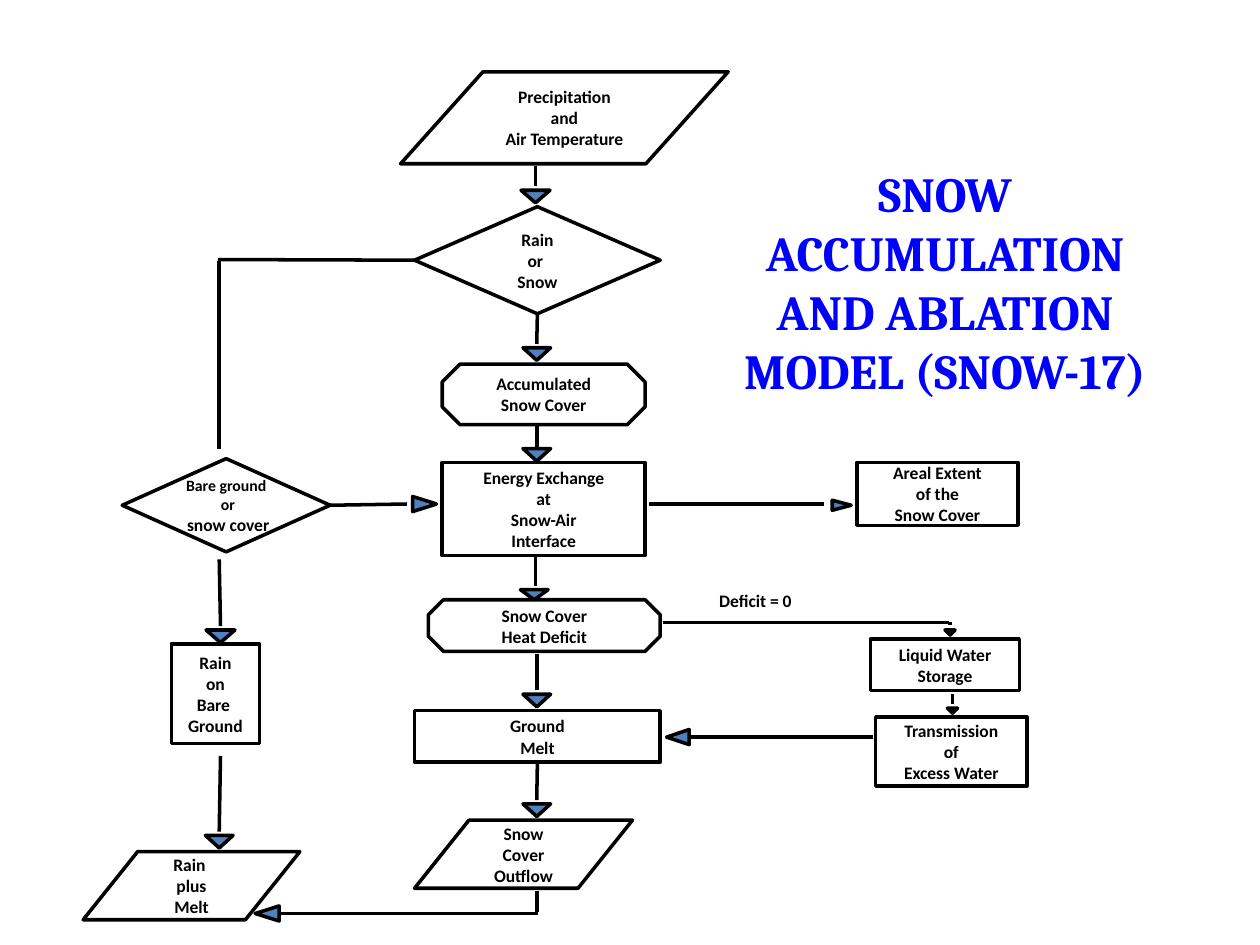
from dataclasses import dataclass

from pptx import Presentation
from pptx import util as u
from pptx.dml.color import RGBColor
from pptx.enum import shapes, text
from pptx.oxml.ns import qn

Shape = shapes.MSO_SHAPE
Align = text.PP_ALIGN
Anchor = text.MSO_ANCHOR


@dataclass(frozen=True)
class Theme:
    ink: RGBColor = RGBColor(0x00, 0x00, 0x00)
    title: RGBColor = RGBColor(0x00, 0x00, 0xFF)
    arrow: RGBColor = RGBColor(0x4F, 0x81, 0xBD)
    body_font: str = "Calibri"
    title_font: str = "Cambria"
    body_size: float = 10
    small_size: float = 9
    title_size: float = 28
    line_width: float = 2


THEME = Theme()

STEPS = {
    "precipitation": (Shape.PARALLELOGRAM, 3.18, 0.57, 2.6, 0.73, 0.895,
                      ["Precipitation", "and", "Air Temperature"]),
    "rain or snow": (Shape.DIAMOND, 3.29, 1.64, 1.95, 0.85, None, ["Rain", "or ", "Snow"]),
    "accumulated": (Shape.OCTAGON, 3.51, 2.89, 1.61, 0.48, 0.293,
                    ["Accumulated", "Snow Cover"]),
    "energy": (Shape.RECTANGLE, 3.51, 3.67, 1.61, 0.74, None,
               ["Energy Exchange", "at", "Snow-Air", "Interface"]),
    "heat deficit": (Shape.OCTAGON, 3.4, 4.76, 1.84, 0.41, 0.293,
                     ["Snow Cover", "Heat Deficit"]),
    "ground melt": (Shape.RECTANGLE, 3.29, 5.64, 1.95, 0.41, None, ["Ground", "Melt"]),
    "outflow": (Shape.PARALLELOGRAM, 3.29, 6.51, 1.73, 0.54, 0.8,
                ["Snow", "Cover", "Outflow"]),
    "rain plus melt": (Shape.PARALLELOGRAM, 0.66, 6.76, 1.72, 0.54, 0.8,
                       ["Rain ", "plus", "Melt"]),
    "rain on ground": (Shape.RECTANGLE, 1.36, 5.11, 0.7, 0.79, None,
                       ["Rain", "on", "Bare ", "Ground"]),
    "areal extent": (Shape.RECTANGLE, 6.8, 3.67, 1.28, 0.5, None,
                     ["Areal Extent", "of the", "Snow Cover"]),
    "liquid water": (Shape.RECTANGLE, 6.91, 5.07, 1.18, 0.41, None,
                     ["Liquid Water", "Storage"]),
    "transmission": (Shape.RECTANGLE, 6.95, 5.69, 1.2, 0.55, None,
                     ["Transmission", "of", "Excess Water"]),
    "bare ground": (Shape.DIAMOND, 0.97, 3.64, 1.65, 0.74, None,
                    ["Bare ground", " or", " snow cover"]),
}

LINES = [
    (4.25, 1.32, 4.25, 1.48),
    (4.26, 3.38, 4.26, 3.55),
    (4.25, 4.42, 4.25, 4.65),
    (4.26, 5.19, 4.26, 5.48),
    (4.26, 7.07, 4.26, 7.24),
    (4.27, 7.25, 2.23, 7.25),
    (1.74, 2.07, 1.74, 3.56),
    (1.74, 4.44, 1.75, 4.97),
    (1.75, 6, 1.74, 6.6),
    (5.15, 4, 6.54, 4),
    (5.26, 4.94, 7.53, 4.94),
    (7.54, 4.94, 7.54, 4.96),
    (7.56, 5.51, 7.56, 5.59),
    (6.93, 5.85, 5.48, 5.85),
]

JOINED_LINES = [
    ("rain or snow", 1, 1.73, 2.06),
    ("rain or snow", 2, 4.26, 2.73),
    ("ground melt", 2, 4.26, 6.35),
    ("bare ground", 3, 3.23, 4),
]

DOWN, LEFT, RIGHT = 180, 270, 90
ARROWHEADS = [
    (4.25, 1.56, 0.23, 0.1, DOWN),
    (4.26, 2.81, 0.22, 0.1, DOWN),
    (4.26, 3.61, 0.22, 0.1, DOWN),
    (4.24, 4.72, 0.22, 0.08, DOWN),
    (4.26, 5.56, 0.22, 0.1, DOWN),
    (4.26, 6.43, 0.22, 0.1, DOWN),
    (1.75, 5.05, 0.23, 0.1, DOWN),
    (1.74, 6.68, 0.22, 0.1, DOWN),
    (7.54, 5.02, 0.08, 0.04, DOWN),
    (7.56, 5.64, 0.08, 0.04, DOWN),
    (3.37, 4, 0.12, 0.19, RIGHT),
    (6.68, 4.01, 0.08, 0.15, RIGHT),
    (2.12, 7.25, 0.12, 0.19, LEFT),
    (5.38, 5.85, 0.12, 0.18, LEFT),
]


def write_text(shape, lines, font=THEME.body_font, size=THEME.body_size, color=THEME.ink,
               align=Align.CENTER, anchor=Anchor.MIDDLE, wrap=False):
    frame = shape.text_frame
    frame.word_wrap = wrap
    frame.auto_size = text.MSO_AUTO_SIZE.NONE
    frame.vertical_anchor = anchor
    for index, line in enumerate(lines):
        paragraph = frame.add_paragraph() if index else frame.paragraphs[0]
        paragraph.alignment = align
        run = paragraph.add_run()
        run.text = line
        run.font.name = font
        run.font.size = u.Pt(size)
        run.font.bold = True
        run.font.color.rgb = color


def style_line(line):
    line.color.rgb = THEME.ink
    line.width = u.Pt(THEME.line_width)


def add_title(slide, lines):
    title = slide.shapes.title
    title.left, title.top = u.Inches(5.5), u.Inches(1.25)
    title.width, title.height = u.Inches(4), u.Inches(1.97)
    write_text(title, lines, font=THEME.title_font, size=THEME.title_size,
               color=THEME.title, anchor=Anchor.TOP, wrap=True)


def add_step(slide, kind, left, top, width, height, adjustment, lines):
    shape = slide.shapes.add_shape(kind, *map(u.Inches, (left, top, width, height)))
    shape.shadow.inherit = False
    shape.fill.background()
    style_line(shape.line)
    if adjustment is not None:
        shape.adjustments[0] = adjustment
    write_text(shape, lines)
    return shape


def add_line(slide, start_x, start_y, end_x, end_y):
    line = slide.shapes.add_connector(
        shapes.MSO_CONNECTOR.STRAIGHT, *map(u.Inches, (start_x, start_y, end_x, end_y)))
    style_line(line.line)
    properties = line._element.spPr
    properties.append(properties.makeelement(qn("a:effectLst"), {}))
    return line


def add_arrowhead(slide, center_x, center_y, width, height, rotation):
    head = slide.shapes.add_shape(
        Shape.ISOSCELES_TRIANGLE, u.Inches(center_x - width / 2),
        u.Inches(center_y - height / 2), u.Inches(width), u.Inches(height))
    head.rotation = rotation
    head.shadow.inherit = False
    head.fill.solid()
    head.fill.fore_color.rgb = THEME.arrow
    style_line(head.line)


def add_label(slide, left, top, width, height, label):
    box = slide.shapes.add_textbox(*map(u.Inches, (left, top, width, height)))
    write_text(box, [label], align=Align.LEFT, anchor=Anchor.TOP)


def main():
    presentation = Presentation()
    presentation.slide_width = u.Inches(10)
    presentation.slide_height = u.Inches(7.5)
    slide = presentation.slides.add_slide(presentation.slide_layouts[5])

    add_title(slide, ["SNOW ACCUMULATION", "AND ABLATION MODEL (SNOW-17)"])
    steps = {name: add_step(slide, *step) for name, step in STEPS.items()}
    for paragraph in steps["bare ground"].text_frame.paragraphs[:2]:
        paragraph.runs[0].font.size = u.Pt(THEME.small_size)
    for line in LINES:
        add_line(slide, *line)
    for name, side, end_x, end_y in JOINED_LINES:
        add_line(slide, end_x, end_y, end_x, end_y).end_connect(steps[name], side)
    for arrowhead in ARROWHEADS:
        add_arrowhead(slide, *arrowhead)
    add_label(slide, 5.61, 4.63, 0.78, 0.26, "Deficit = 0")

    presentation.save("out.pptx")


if __name__ == "__main__":
    main()
